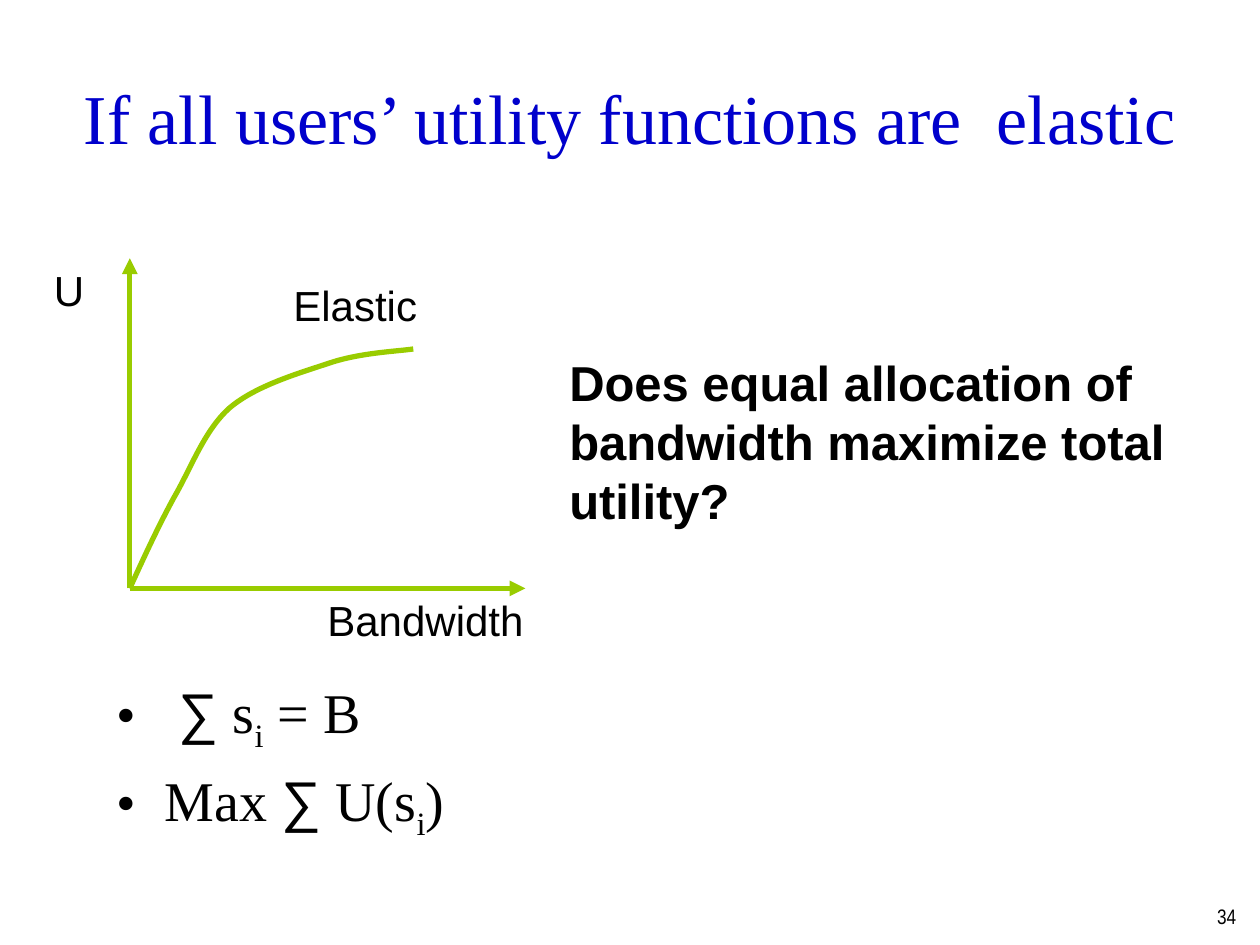
from dataclasses import dataclass

import pptx
import pptx.dml.color
import pptx.enum.shapes
import pptx.enum.text
import pptx.oxml.ns
import pptx.util
from lxml import etree
from pptx.util import Inches

ALIGN = pptx.enum.text.PP_ALIGN
ANCHOR = pptx.enum.text.MSO_ANCHOR
qn = pptx.oxml.ns.qn


@dataclass(frozen=True)
class Theme:
    title_color: str = "0000CC"
    text_color: str = "000000"
    graph_color: str = "99CC00"
    serif: str = "Times New Roman"
    sans: str = "Arial"
    narrow: str = "Arial Narrow"
    title_size: int = 40
    formula_size: int = 32
    question_size: int = 28
    label_size: int = 24
    number_size: int = 12
    graph_width: int = 3


theme = Theme()

deck = pptx.Presentation()
deck.slide_width, deck.slide_height = Inches(10), Inches(7.5)
slide = deck.slides.add_slide(deck.slide_layouts[6])


def add_text(paragraphs, box, size, font=theme.sans, color=theme.text_color, bold=False,
             align=ALIGN.LEFT, anchor=ANCHOR.TOP, wrap=True, bullets=False):
    """Each paragraph is a list of (text, font or None, baseline in percent)."""
    if isinstance(paragraphs, str):
        paragraphs = [[(paragraphs, None, 0)]]
    frame = slide.shapes.add_textbox(*map(Inches, box)).text_frame
    frame.word_wrap = wrap
    frame.vertical_anchor = anchor
    for index, pieces in enumerate(paragraphs):
        paragraph = frame.add_paragraph() if index else frame.paragraphs[0]
        paragraph.alignment = align
        if bullets:
            properties = paragraph._p.get_or_add_pPr()
            properties.set("marL", str(Inches(0.38)))
            properties.set("indent", str(Inches(-0.38)))
            before = etree.SubElement(properties, qn("a:spcBef"))
            etree.SubElement(before, qn("a:spcPct"), val="20000")
            etree.SubElement(properties, qn("a:buFont"), typeface=font)
            etree.SubElement(properties, qn("a:buChar"), char="•")
        for text, own_font, baseline in pieces:
            run = paragraph.add_run()
            run.text = text
            run.font.name = own_font or font
            run.font.size = pptx.util.Pt(size)
            run.font.bold = bold
            run.font.color.rgb = pptx.dml.color.RGBColor.from_string(color)
            if baseline:
                run._r.get_or_add_rPr().set("baseline", str(baseline * 1000))


def style_line(line):
    line.color.rgb = pptx.dml.color.RGBColor.from_string(theme.graph_color)
    line.width = pptx.util.Pt(theme.graph_width)


# Page number and title
add_text("34", (7.83, 6.92, 2.08, 0.5), theme.number_size, font=theme.narrow,
         align=ALIGN.RIGHT, anchor=ANCHOR.BOTTOM)
add_text("If all users’ utility functions are  elastic", (0.5, 0.3, 9, 1.25),
         theme.title_size, font=theme.serif, color=theme.title_color,
         align=ALIGN.CENTER, anchor=ANCHOR.MIDDLE)

# Constraint and objective
add_text(
    [
        [(" ", None, 0), ("∑", theme.sans, 0), (" s", None, 0), ("i", None, -25),
         (" = B", None, 0)],
        [("Max ", None, 0), ("∑", theme.sans, 0), (" U(s", None, 0), ("i", None, -25),
         (")", None, 0)],
    ],
    (0.83, 5.33, 8.5, 1.5), theme.formula_size, font=theme.serif, bullets=True)

# Axes, both starting at the graph's origin
origin = (1.03, 4.67)
for axis_end in [(4.17, 4.67), (1.03, 2.05)]:
    axis = slide.shapes.add_connector(
        pptx.enum.shapes.MSO_CONNECTOR.STRAIGHT, *map(Inches, origin + axis_end))
    style_line(axis.line)
    etree.SubElement(axis.line._get_or_add_ln(), qn("a:tailEnd"), type="triangle")
    etree.SubElement(axis._element.spPr, qn("a:effectLst"))

# Elastic utility curve: three Bézier points per segment
curve_points = [
    (1.14, 4.43), (1.25, 4.19), (1.38, 3.95),
    (1.52, 3.71), (1.62, 3.42), (1.82, 3.24),
    (2.03, 3.06), (2.38, 2.96), (2.62, 2.88),
    (2.86, 2.80), (3.14, 2.79), (3.28, 2.77),
]
builder = slide.shapes.build_freeform(*map(Inches, origin))
builder.add_line_segments([(Inches(x), Inches(y)) for x, y in curve_points], close=False)
utility_curve = builder.convert_to_shape()
utility_curve.shadow.inherit = False
utility_curve.fill.background()
style_line(utility_curve.line)
outline = utility_curve._element.spPr.find(".//" + qn("a:path"))
steps = outline.findall(qn("a:lnTo"))
for first in range(0, len(steps), 3):
    segment = etree.SubElement(outline, qn("a:cubicBezTo"))
    for step in steps[first:first + 3]:
        segment.append(step[0])
        outline.remove(step)

# Graph labels
for label, box in [
    ("Bandwidth", (2.5, 4.67, 1.76, 0.5)),
    ("U", (0.33, 2.05, 0.44, 0.5)),
    ("Elastic", (2.23, 2.17, 1.18, 0.5)),
]:
    add_text(label, box, theme.label_size, wrap=False)

# Question
add_text("Does equal allocation of bandwidth maximize total utility?",
         (4.42, 2.75, 5.5, 1.5), theme.question_size, bold=True)

deck.save("out.pptx")
